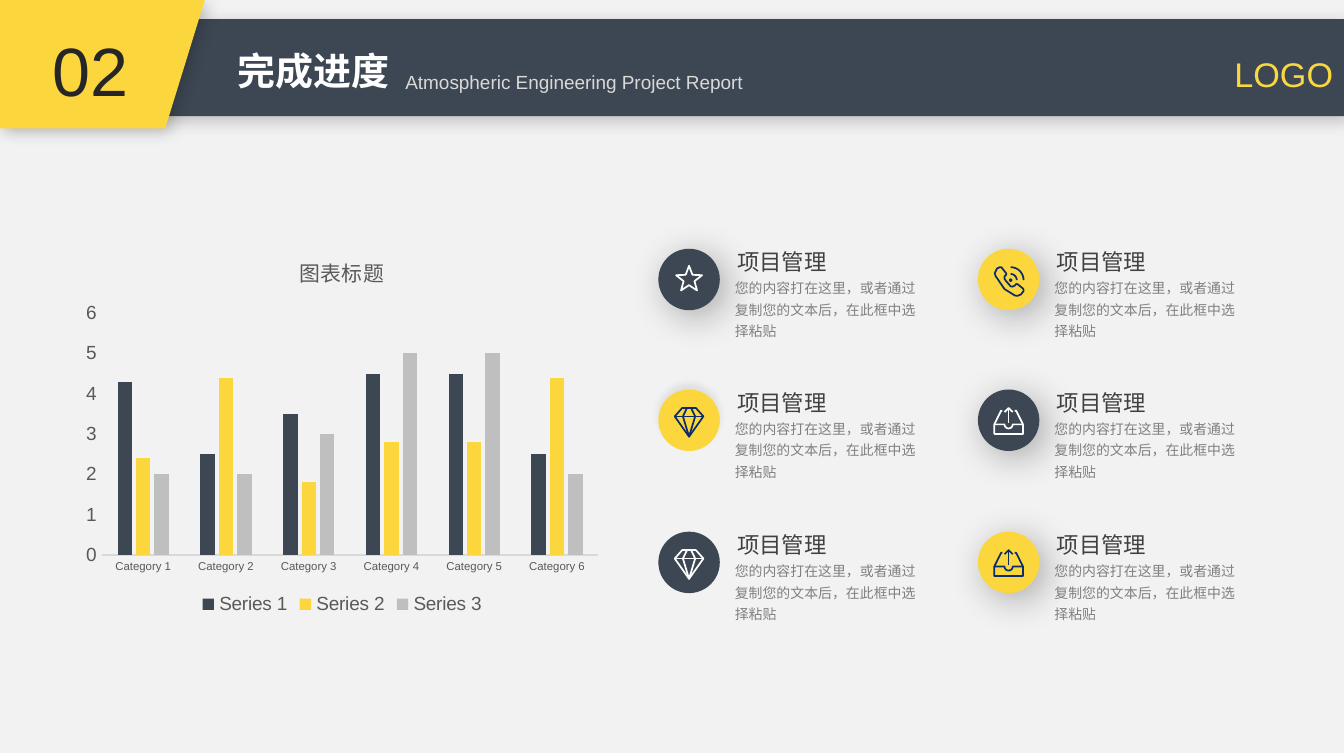
from math import cos, pi, sin

from lxml.etree import SubElement
from pptx import Presentation
from pptx.chart.data import CategoryChartData
from pptx.dml.color import RGBColor
from pptx.enum.chart import XL_CHART_TYPE as ChartType
from pptx.enum.chart import XL_LEGEND_POSITION as LegendPosition
from pptx.enum.chart import XL_TICK_MARK as TickMark
from pptx.enum.shapes import MSO_SHAPE as Preset
from pptx.enum.text import MSO_ANCHOR as Anchor
from pptx.enum.text import MSO_AUTO_SIZE as AutoSize
from pptx.enum.text import PP_ALIGN as Align
from pptx.oxml.ns import qn
from pptx.util import Inches, Pt

SLATE = RGBColor(0x3D, 0x47, 0x53)
YELLOW = RGBColor(0xFB, 0xD6, 0x3C)
LOGO_YELLOW = RGBColor(0xF9, 0xD7, 0x40)
NAVY = RGBColor(0x0A, 0x2C, 0x6B)
WHITE = RGBColor(0xFF, 0xFF, 0xFF)
PAPER = RGBColor(0xF2, 0xF2, 0xF2)
PALE = RGBColor(0xD9, 0xD9, 0xD9)
SILVER = RGBColor(0xBF, 0xBF, 0xBF)
GREY = RGBColor(0x80, 0x80, 0x80)
AXIS_GREY = RGBColor(0x59, 0x59, 0x59)
CHARCOAL = RGBColor(0x40, 0x40, 0x40)
INK = RGBColor(0x26, 0x26, 0x26)

# Shadows: opacity in percent, blur and distance in points, direction in degrees
BANNER_SHADOW = (20, 8, 3, 45)
BADGE_SHADOW = (30, 20, 5, 45)
FAINT_SHADOW = (7, 4, 3, 270)


def arc(x, y, radius, start, end, steps=12):
    angles = [start + (end - start) * i / steps for i in range(steps + 1)]
    return [(x + radius * cos(a), y + radius * sin(a)) for a in angles]


# Icons: lists of (points, closed), in hundredths of an inch from the badge centre
STAR = [([((4.2 if i % 2 else 10) * sin(i * pi / 5),
           (-4.2 if i % 2 else -10) * cos(i * pi / 5)) for i in range(10)], True)]
DIAMOND = [
    ([(-5, -9), (5, -9), (10.5, -2.8), (0, 12), (-10.5, -2.8)], True),
    ([(-10.5, -2.8), (10.5, -2.8)], False),
    ([(-1.5, -9), (-4.5, -2.8), (0, 12), (4.5, -2.8), (1.5, -9)], False),
]
TRAY = [
    ([(-10.5, 3), *arc(0, 3, 3, pi, 0), (10.5, 3), (10.5, 10), (-10.5, 10)], True),
    ([(-10.5, 3), (-5.5, -7), (-4.5, -7)], False),
    ([(10.5, 3), (5.5, -7), (4.5, -7)], False),
    ([(0, 2), (0, -9)], False),
    ([(-3, -6), (0, -9), (3, -6)], False),
]
PHONE = [
    ([(-8.5, -8), (-6.5, -9), (-5.3, -9), (-1.7, -4.5), (-1.7, -3.5), (-3, -2.3),
      (-3, -0.5), (-2, 1), (1.5, 5), (3, 5.3), (4.5, 4.5), (5.5, 3.3), (6.7, 3.5),
      (10.8, 6.8), (11, 8.5), (9, 11), (6.5, 12), (4.5, 11.7), (-3, 7), (-9.5, -2.5),
      (-10.2, -4.5)], True),
    (arc(1.5, 0.5, 0.6, 0, 2 * pi), True),
    (arc(1.5, 0.5, 4.5, -pi / 2, 0), False),
    (arc(1.5, 0.5, 9.5, -pi / 2, 0), False),
]

HEADING = "项目管理"
DETAIL = "您的内容打在这里，或者通过复制您的文本后，在此框中选择粘贴"
COLUMNS = (4.82, 7.16)
ROWS = (1.82, 2.85, 3.89)
BADGES = (
    ((STAR, SLATE, BADGE_SHADOW), (PHONE, YELLOW, BADGE_SHADOW)),
    ((DIAMOND, YELLOW, FAINT_SHADOW), (TRAY, SLATE, BADGE_SHADOW)),
    ((DIAMOND, SLATE, None), (TRAY, YELLOW, BADGE_SHADOW)),
)
CATEGORIES = [f"Category {n}" for n in range(1, 7)]
SERIES = (
    ("Series 1", (4.3, 2.5, 3.5, 4.5, 4.5, 2.5), SLATE),
    ("Series 2", (2.4, 4.4, 1.8, 2.8, 2.8, 4.4), YELLOW),
    ("Series 3", (2, 2, 3, 5, 5, 2), SILVER),
)


class SlideBuilder:
    latin = "Arial"
    chinese = "Noto Sans CJK SC"

    def __init__(self, slide):
        self.slide = slide
        slide.background.fill.solid()
        slide.background.fill.fore_color.rgb = PAPER

    def style_font(self, font, size, color, name=None):
        font.size, font.name = Pt(size), name or self.latin
        font.color.rgb = color

    def paint(self, shape, color, shadow=None):
        """Fill a shape without an outline and give it a soft shadow."""
        shape.fill.solid()
        shape.fill.fore_color.rgb = color
        shape.line.fill.background()
        shape.shadow.inherit = False
        if shadow:
            opacity, blur, distance, angle = shadow
            effects = shape._element.spPr.find(qn("a:effectLst"))
            outer = SubElement(effects, qn("a:outerShdw"), blurRad=str(Pt(blur)),
                               dist=str(Pt(distance)), dir=str(angle * 60000),
                               algn="ctr", rotWithShape="0")
            black = SubElement(outer, qn("a:srgbClr"), val="000000")
            SubElement(black, qn("a:alpha"), val=str(opacity * 1000))

    def preset(self, kind, box, color, shadow=None, shapes=None):
        shapes = self.slide.shapes if shapes is None else shapes
        self.paint(shapes.add_shape(kind, *map(Inches, box)), color, shadow)

    def outline(self, contours, shapes=None):
        """Build one freeform from (points, closed) contours in inches."""
        shapes = self.slide.shapes if shapes is None else shapes
        builder = None
        for points, closed in contours:
            first, *rest = [(Inches(x), Inches(y)) for x, y in points]
            if builder is None:
                builder = shapes.build_freeform(*first)
            else:
                builder.move_to(*first)
            builder.add_line_segments(rest, close=closed)
        return builder.convert_to_shape()

    def badge(self, left, top, icon, color, shadow):
        shapes = self.slide.shapes.add_group_shape().shapes
        size = 0.45
        self.preset(Preset.OVAL, (left, top, size, size), color, shadow, shapes)
        x, y = left + size / 2, top + size / 2
        drawing = self.outline([([(x + dx / 100, y + dy / 100) for dx, dy in points], closed)
                                for points, closed in icon], shapes)
        drawing.fill.background()
        drawing.line.color.rgb = WHITE if color == SLATE else NAVY
        drawing.line.width = Pt(0.9)
        drawing.shadow.inherit = False

    def text(self, box, words, size, color, wrap=False, bold=None, align=None,
             spacing=None, anchor=Anchor.TOP, insets=(0.1, 0.05)):
        frame = self.slide.shapes.add_textbox(*map(Inches, box)).text_frame
        frame.word_wrap, frame.auto_size = wrap, AutoSize.SHAPE_TO_FIT_TEXT
        frame.vertical_anchor = anchor
        frame.margin_left = frame.margin_right = Inches(insets[0])
        frame.margin_top = frame.margin_bottom = Inches(insets[1])
        paragraph = frame.paragraphs[0]
        paragraph.alignment, paragraph.line_spacing = align, spacing
        run = paragraph.add_run()
        run.text, run.font.bold = words, bold
        self.style_font(run.font, size, color)
        SubElement(run.font._element, qn("a:ea"), typeface=self.chinese)

    def column_chart(self, box, title, categories, series):
        data = CategoryChartData()
        data.categories = categories
        for name, values, _ in series:
            data.add_series(name, values)
        chart = self.slide.shapes.add_chart(
            ChartType.COLUMN_CLUSTERED, *map(Inches, box), data).chart
        self.style_font(chart.font, 10, AXIS_GREY)
        chart.has_title = True
        title_run = chart.chart_title.text_frame.paragraphs[0].add_run()
        title_run.text, title_run.font.bold = title, False
        self.style_font(title_run.font, 11, AXIS_GREY, self.chinese)
        SubElement(title_run.font._element, qn("a:ea"), typeface=self.chinese)
        chart.has_legend = True
        chart.legend.position = LegendPosition.BOTTOM
        chart.legend.include_in_layout = False
        self.style_font(chart.legend.font, 10, AXIS_GREY)

        plot = chart.plots[0]
        plot.gap_width, plot.overlap, plot.vary_by_categories = 219, -27, False
        for bars, (_, _, color) in zip(plot.series, series):
            bars.format.fill.solid()
            bars.format.fill.fore_color.rgb = color
        for axis, size in ((chart.category_axis, 6), (chart.value_axis, 10)):
            axis.major_tick_mark = axis.minor_tick_mark = TickMark.NONE
            axis.has_major_gridlines = False
            self.style_font(axis.tick_labels.font, size, AXIS_GREY)
        chart.category_axis.format.line.color.rgb = PALE
        chart.category_axis.format.line.width = Pt(0.75)
        values = chart.value_axis
        values.format.line.fill.background()
        values.minimum_scale, values.maximum_scale, values.major_unit = 0, 6, 1
        self.place_plot(chart, x=0.05, y=0.2, w=0.93, h=0.63)

    def place_plot(self, chart, **fractions):
        area = chart.element.find(".//" + qn("c:plotArea"))
        for automatic in area.findall(qn("c:layout")):
            area.remove(automatic)
        layout = SubElement(area, qn("c:layout"))
        area.insert(0, layout)
        manual = SubElement(layout, qn("c:manualLayout"))
        settings = {"layoutTarget": "inner", "xMode": "edge", "yMode": "edge", **fractions}
        for tag, value in settings.items():
            SubElement(manual, qn(f"c:{tag}"), val=str(value))


def main():
    deck = Presentation()
    deck.slide_width, deck.slide_height = Inches(9.84), Inches(5.51)
    page = SlideBuilder(deck.slides.add_slide(deck.slide_layouts[6]))

    page.preset(Preset.RECTANGLE, (0, 0.14, 9.84, 0.71), SLATE, BANNER_SHADOW)
    number_tab = page.outline([([(0, 0), (1.5, 0), (1.21, 0.94), (0, 0.94)], True)])
    page.paint(number_tab, YELLOW, BANNER_SHADOW)
    page.text((8.94, 0.34, 0.93, 0.4), "LOGO", 18, LOGO_YELLOW)
    page.text((1.64, 0.3, 1.32, 0.44), "完成进度", 20, WHITE, bold=True)
    page.text((2.87, 0.47, 2.76, 0.28), "Atmospheric Engineering Project Report",
              10, PALE, wrap=True)
    page.text((0.28, 0.16, 0.76, 0.71), "02", 36, INK, align=Align.CENTER)

    page.column_chart((0.55, 1.73, 3.91, 2.81), "图表标题", CATEGORIES, SERIES)

    for top, badges in zip(ROWS, BADGES):
        for left, badge in zip(COLUMNS, badges):
            page.badge(left, top, *badge)
            page.text((left + 0.48, top - 0.1, 0.86, 0.33), HEADING, 11.8, CHARCOAL,
                      spacing=1.3, anchor=Anchor.MIDDLE)
            page.text((left + 0.47, top + 0.15, 1.57, 0.57), DETAIL, 7.3, GREY,
                      wrap=True, spacing=1.3, insets=(0.09, 0.04))

    deck.save("out.pptx")


if __name__ == "__main__":
    main()
